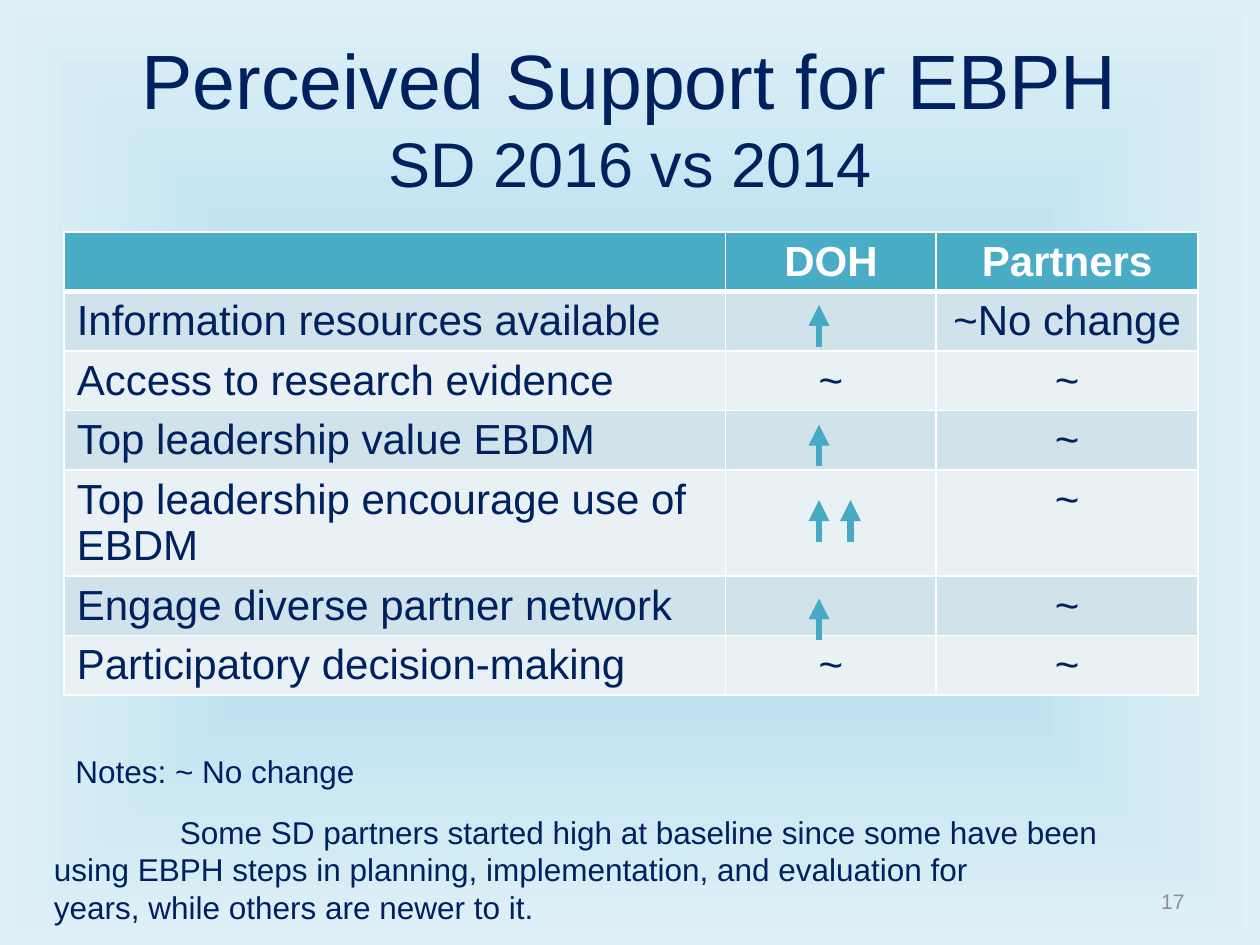
from lxml import etree
from pptx import Presentation
from pptx.dml.color import RGBColor
from pptx.enum import shapes, text
from pptx.oxml.ns import qn
from pptx.util import Inches, Pt

HUES = {"ink": "002060", "head": "4BACC6", "odd": "D0E3EA", "even": "E9F1F5",
        "white": "FFFFFF", "arrow": "46AAC5", "grey": "8C8D9D"}
GLOW = [(0, "DBEEF4"), (50, "C0E3F1"), (100, "E0F1F7")]
ROWS = [("", "DOH", "Partners"),
        ("Information resources available", "", "~No change"),
        ("Access to research evidence", "~", "~"),
        ("Top leadership value EBDM", "", "~"),
        ("Top leadership encourage use of EBDM", "", "~"),
        ("Engage diverse partner network", "", "~"),
        ("Participatory decision-making", "~", "~")]
COLS = (5.25, 1.67, 2.08)
STORY = ("Some SD partners started high at baseline since some have been \v"
         "using EBPH steps in planning, implementation, and evaluation for \v"
         "years, while others are newer to it.")
LEFT, CENTER, RIGHT = (text.PP_ALIGN.LEFT, text.PP_ALIGN.CENTER,
                       text.PP_ALIGN.RIGHT)


def tint(name):
    """Return the named colour."""
    return RGBColor.from_string(HUES[name])


def add(parent, tag, **attrs):
    """Append a drawing element with attributes."""
    node = etree.SubElement(parent, qn(tag))
    for key, value in attrs.items():
        node.set(key, str(value))
    return node


def place(shape, box):
    """Move a shape to a box in inches."""
    for key, value in zip(("left", "top", "width", "height"), box):
        setattr(shape, key, Inches(value))


def style(font, size, hue="ink", bold=False):
    """Format a font."""
    form = {"name": "Arial", "size": Pt(size), "bold": bold}
    for key, value in form.items():
        setattr(font, key, value)
    font.color.rgb = tint(hue)


def write(frame, words, size, hue="ink", align=LEFT, bold=False):
    """Write one formatted paragraph."""
    para = frame.paragraphs[0]
    para.text = words
    para.alignment = align
    for run in para.runs:
        style(run.font, size, hue, bold)
    return para


def backdrop(slide):
    """Fill the background with a glow from the centre."""
    slide.background.fill.gradient()
    grad = slide.element.find(".//" + qn("a:gradFill"))
    for child in list(grad):
        grad.remove(child)
    stops = add(grad, "a:gsLst")
    for spot, hue in GLOW:
        add(add(stops, "a:gs", pos=spot * 1000), "a:srgbClr", val=hue)
    shade = add(grad, "a:path", path="shape")
    add(shade, "a:fillToRect", l=50000, t=50000, r=50000, b=50000)


def heading(slide, box):
    """Set the two-line title."""
    title = slide.shapes.title
    place(title, box)
    frame = title.text_frame
    frame.auto_size = text.MSO_AUTO_SIZE.NONE
    frame.vertical_anchor = text.MSO_ANCHOR.MIDDLE
    para = write(frame, "Perceived Support for EBPH\vSD 2016 vs 2014", 44,
                 align=CENTER)
    para.runs[1].font.size = Pt(36)


def edge(cell, row):
    """Draw white cell borders, thick below the header."""
    props = cell._tc.get_or_add_tcPr()
    thick = {("b", 0), ("t", 1)}
    for at, side in enumerate("lrtb"):
        width = Pt(3 if (side, row) in thick else 1)
        line = add(props, "a:ln" + side.upper(), w=int(width))
        add(add(line, "a:solidFill"), "a:srgbClr", val=HUES["white"])
        props.insert(at, line)


def grid(slide, box):
    """Build the comparison table."""
    frame = slide.shapes.add_table(len(ROWS), len(COLS),
                                   *map(Inches, box))
    table = frame.table
    for col, width in zip(table.columns, COLS):
        col.width = Inches(width)
    for r, words in enumerate(ROWS):
        table.rows[r].height = Inches(0.41)
        fill = "head" if r == 0 else "odd" if r % 2 else "even"
        for c, word in enumerate(words):
            cell = table.cell(r, c)
            cell.fill.solid()
            cell.fill.fore_color.rgb = tint(fill)
            write(cell.text_frame, word, 24, "ink" if r else "white",
                  CENTER if c or not r else LEFT, r == 0)
            edge(cell, r)
    place(frame, box)


def arrow(group, x, top, tall=0.33):
    """Draw one upward arrow."""
    line = group.add_connector(shapes.MSO_CONNECTOR.STRAIGHT, Inches(x),
                               Inches(top + tall), Inches(x), Inches(top))
    line.line.color.rgb = tint("arrow")
    line.line.width = Pt(4)
    add(line.line._get_or_add_ln(), "a:tailEnd", type="triangle")
    add(line._element.spPr, "a:effectLst")


def trends(slide, x, gap):
    """Mark the rises in the DOH column."""
    for top in (2.42, 3.37, 4.75):
        arrow(slide.shapes, x, top)
    pair = slide.shapes.add_group_shape().shapes
    for step in range(2):
        arrow(pair, x + step * gap, 3.97)


def note(slide, box, words, size=18, hue="ink", align=LEFT, indent=0):
    """Add a wrapped text box."""
    frame = slide.shapes.add_textbox(*map(Inches, box)).text_frame
    frame.word_wrap = True
    para = write(frame, words, size, hue, align)
    if indent:
        para._p.get_or_add_pPr().set("indent", str(Inches(indent)))
    return frame


def main():
    """Build and save the slide."""
    deck = Presentation()
    deck.slide_width, deck.slide_height = Inches(10), Inches(7.5)
    slide = deck.slides.add_slide(deck.slide_layouts[5])
    backdrop(slide)
    heading(slide, (0.5, 0.3, 9, 1.25))
    grid(slide, (0.51, 1.84, 9, 3.9))
    page = note(slide, (7.17, 6.95, 2.33, 0.4), "17", 12, "grey", RIGHT)
    page.vertical_anchor = text.MSO_ANCHOR.MIDDLE
    trends(slide, 6.5, 0.25)
    note(slide, (0.5, 5.92, 6.25, 0.4), "Notes: ~ No change")
    note(slide, (0.33, 6.4, 8.67, 1.01), STORY, indent=1)
    deck.save("out.pptx")


if __name__ == "__main__":
    main()
